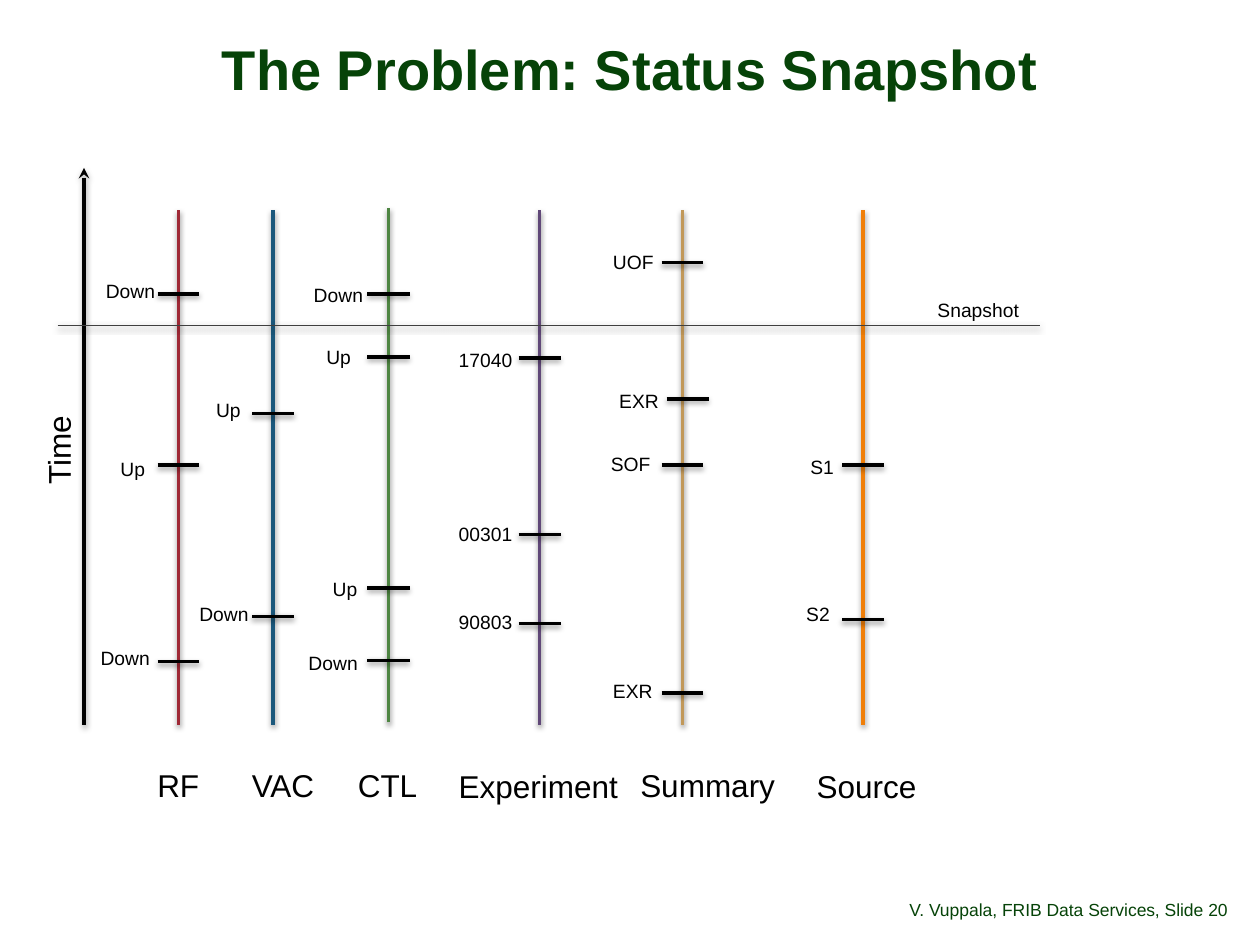
from pptx import Presentation
from pptx.dml.color import RGBColor
from pptx.enum.shapes import MSO_CONNECTOR
from pptx.enum.text import MSO_ANCHOR, MSO_AUTO_SIZE, PP_ALIGN
from pptx.oxml import parse_xml
from pptx.oxml.ns import nsdecls, qn
from pptx.util import Inches, Pt

COLORS = {
    "title": "064308", "ink": "000000", "snapshot": "404040",
    "RF": "9F2936", "VAC": "1B587C", "CTL": "4E8542",
    "Experiment": "604878", "Summary": "C19859", "Source": "F07F09",
}
FONT = "Arial"
CELL = 1 / 12  # grid step in inches
LANE_TOP, LANE_BOTTOM = 20, 69
TICK_HALF = 2
LABEL_HEIGHT, NAME_HEIGHT = 3.5, 4.8
LABEL_WIDTHS = {"Down": 7.2, "Up": 4.8, "EXR": 6.2, "UOF": 6.4, "SOF": 6.3,
                "S1": 4.7, "S2": 4.7, "17040": 7.6, "00301": 7.6, "90803": 7.6}

# name, lane column, lane shift up, name box (left, top, width),
# events (row, label, label left, label top, tick shift)
LANES = [
    ("RF", 17, 0, (13.8, 72.4, 6.5), [
        (28, "Down", 8.9, 26, 0), (44.3, "Up", 10.3, 43, 0), (63, "Down", 8.4, 61, 0)]),
    ("VAC", 26, 0, (22.8, 72.4, 8.4), [
        (39.4, "Up", 19.4, 37.3, 0), (58.7, "Down", 17.8, 56.8, 0)]),
    ("CTL", 37, 0.2, (32.9, 72.4, 8.2), [
        (28, "Down", 28.7, 26.4, 0), (34, "Up", 29.9, 32.3, 0),
        (56, "Up", 30.5, 54.4, 0), (62.9, "Down", 28.2, 61.4, 0)]),
    ("Experiment", 51.4, 0, (42.5, 72.5, 17.8), [
        (34.1, "17040", 42.5, 32.6, 0), (50.9, "00301", 42.5, 49.1, 0),
        (59.4, "90803", 42.5, 57.5, 0)]),
    ("Summary", 65, 0, (59.8, 72.4, 15.4), [
        (25, "UOF", 57.2, 23.2, 0), (38, "EXR", 57.8, 36.5, 0.5),
        (44.3, "SOF", 57, 42.5, 0), (66, "EXR", 57.2, 64.1, 0)]),
    ("Source", 82.2, 0, (76.6, 72.5, 12), [
        (44.3, "S1", 76, 42.8, 0), (59, "S2", 75.6, 56.8, 0)]),
]


def grid(steps):
    return Inches(steps * CELL)


class TimelineSlide:
    """Holds the style and the current slide; lengths are grid steps."""

    def __init__(self, deck):
        self.page = deck.slides.add_slide(deck.slide_layouts[5])

    def add_span(self, para, text, size, color, bold=False):
        span = para.add_run()
        span.text = text
        span.font.name = FONT
        span.font.size = Pt(size)
        span.font.bold = bold
        span.font.color.rgb = RGBColor.from_string(COLORS[color])

    def title(self, text):
        box = self.page.shapes.title
        box.left, box.top = grid(1), grid(3.7)
        box.width, box.height = grid(118), grid(6.4)
        frame = box.text_frame
        frame.margin_left = frame.margin_right = Inches(0.06)
        frame.margin_top = frame.margin_bottom = Inches(0.02)
        frame.vertical_anchor = MSO_ANCHOR.MIDDLE
        para = frame.paragraphs[0]
        para.alignment = PP_ALIGN.CENTER
        para.line_spacing = 0.88
        self.add_span(para, text, 32, "title", bold=True)

    def label(self, text, left, top, width, height=LABEL_HEIGHT, size=11, rotation=0):
        box = self.page.shapes.add_textbox(*map(grid, (left, top, width, height)))
        box.rotation = rotation
        frame = box.text_frame
        frame.word_wrap = False
        frame.auto_size = MSO_AUTO_SIZE.SHAPE_TO_FIT_TEXT
        self.add_span(frame.paragraphs[0], text, size, "ink")

    def footer(self, text, left, width, alignment):
        box = self.page.shapes.add_textbox(*map(grid, (left, 83.4, width, 4.8)))
        frame = box.text_frame
        frame.word_wrap = True
        frame.margin_left = frame.margin_right = 0
        frame.vertical_anchor = MSO_ANCHOR.BOTTOM
        para = frame.paragraphs[0]
        para.alignment = alignment
        para.line_spacing = 0.9
        self.add_span(para, text, 10, "title")

    def line(self, start, end, color="ink", width=2, arrow=False):
        """Draw a softly shadowed line, with an optional arrowhead at its start."""
        connector = self.page.shapes.add_connector(
            MSO_CONNECTOR.STRAIGHT, *map(grid, start + end))
        connector.line.color.rgb = RGBColor.from_string(COLORS[color])
        connector.line.width = Pt(width)
        properties = connector._element.spPr
        if arrow:
            properties.find(qn("a:ln")).append(
                parse_xml(f'<a:headEnd {nsdecls("a")} type="stealth"/>'))
        properties.append(parse_xml(
            f'<a:effectLst {nsdecls("a")}>'
            f'<a:outerShdw blurRad="{Pt(3.1)}" dist="{Pt(1.6)}" dir="5400000" rotWithShape="0">'
            '<a:srgbClr val="000000"><a:alpha val="38000"/></a:srgbClr>'
            '</a:outerShdw></a:effectLst>'))

    def lane(self, name, column, rise, name_box, events):
        """Draw one system's timeline with its ticks, labels and name."""
        self.line((column, LANE_BOTTOM - rise), (column, LANE_TOP - rise), name)
        for row, text, left, top, shift in events:
            middle = column + shift
            self.line((middle - TICK_HALF, row), (middle + TICK_HALF, row))
            self.label(text, left, top, LABEL_WIDTHS[text])
        self.label(name, *name_box, height=NAME_HEIGHT, size=18)


def main():
    deck = Presentation()
    deck.slide_width, deck.slide_height = Inches(10), Inches(7.5)
    slide = TimelineSlide(deck)
    slide.title("The Problem: Status Snapshot")
    slide.footer("V. Vuppala, FRIB Data Services", 54.4, 55.6, PP_ALIGN.RIGHT)
    slide.footer(", Slide 20", 110, 10, PP_ALIGN.LEFT)
    slide.line((8, 16), (8, LANE_BOTTOM), arrow=True)
    slide.label("Time", 0.2, 39.6, 10.7, NAME_HEIGHT, size=18, rotation=270)
    for lane in LANES:
        slide.lane(*lane)
    slide.line((5.5, 31), (99, 31), "snapshot", width=1)
    slide.label("Snapshot", 88.1, 27.8, 10.2)
    deck.save("out.pptx")


if __name__ == "__main__":
    main()
